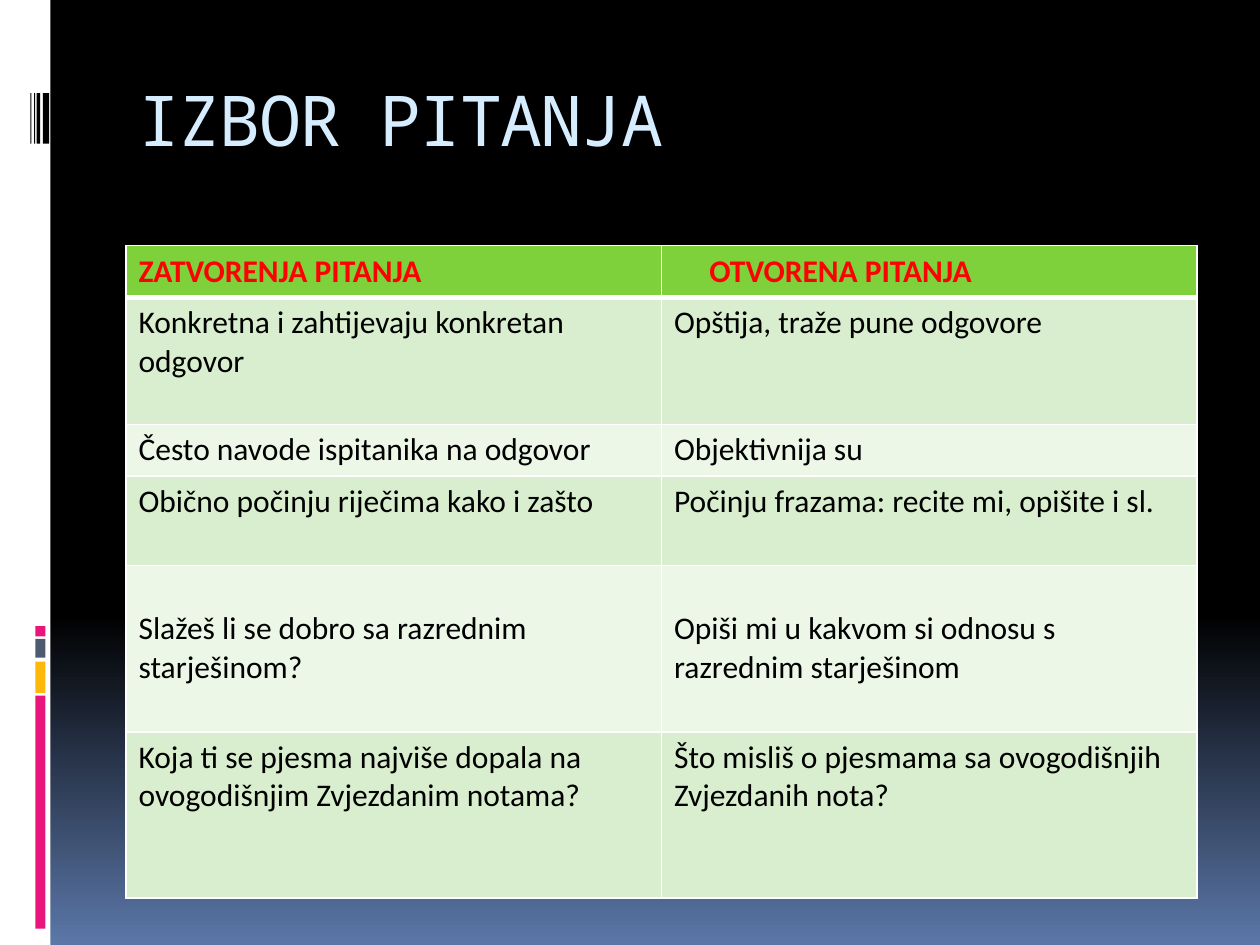
from typing import NamedTuple

from lxml.etree import SubElement
from pptx import Presentation
from pptx.dml.color import RGBColor
from pptx.enum.shapes import MSO_SHAPE as Shape
from pptx.enum.text import MSO_ANCHOR as Anchor
from pptx.oxml import parse_xml
from pptx.oxml.ns import nsdecls, qn
from pptx.util import Inches, Pt

WHITE = RGBColor(0xFF, 0xFF, 0xFF)
BLACK = RGBColor(0x00, 0x00, 0x00)
BLUE = RGBColor(0x5B, 0x77, 0xA8)
PALE_BLUE = RGBColor(0xD6, 0xEC, 0xFF)
PINK = RGBColor(0xEA, 0x15, 0x7A)
AMBER = RGBColor(0xFE, 0xB8, 0x0A)
SLATE = RGBColor(0x4E, 0x5B, 0x6F)
RED = RGBColor(0xFF, 0x00, 0x00)
GREEN = RGBColor(0x7F, 0xD1, 0x3B)
BANDS = (RGBColor(0xD8, 0xEE, 0xCE), RGBColor(0xEC, 0xF7, 0xE8))


class Bar(NamedTuple):
    left: float
    top: float
    width: float
    height: float
    color: RGBColor


class Row(NamedTuple):
    closed: str
    open: str
    height: float
    top_margin: float = 0.05


BARS = [
    Bar(0, 0, 0.4, 7.5, WHITE),
    Bar(0.28, 5.52, 0.08, 1.85, PINK),
    Bar(0.28, 5.25, 0.08, 0.25, AMBER),
    Bar(0.28, 5.07, 0.08, 0.15, SLATE),
    Bar(0.28, 4.97, 0.08, 0.08, PINK),
] + [
    Bar(left, 0.74, width, 0.4, BLACK)
    for left, width in ((0.34, 0.05), (0.29, 0.03), (0.27, 0.01), (0.24, 0.01))
]

ROWS = [
    Row("ZATVORENJA PITANJA", "OTVORENA PITANJA", 0.41),
    Row("Konkretna i zahtijevaju konkretan odgovor",
        "Opštija, traže pune odgovore", 1.01),
    Row("Često navode ispitanika na odgovor", "Objektivnija su", 0.41),
    Row("Obično počinju riječima kako i zašto",
        "Počinju frazama: recite mi, opišite i sl.", 0.71),
    Row("Slažeš li se dobro sa razrednim starješinom?",
        "Opiši mi u kakvom si odnosu s razrednim starješinom", 1.32, 0.35),
    Row("Koja ti se pjesma najviše dopala na ovogodišnjim Zvjezdanim notama?",
        "Što misliš o pjesmama sa ovogodišnjih Zvjezdanih nota?", 1.32),
]


def paint_background(s) -> None:
    fill = s.background.fill
    fill.gradient()
    fill.gradient_angle = 270
    for stop, position, color in zip(fill.gradient_stops, (0.65, 1), (BLACK, BLUE)):
        stop.position = position
        stop.color.rgb = color


def add_bar(s, bar: Bar) -> None:
    sp = s.shapes.add_shape(Shape.RECTANGLE, *map(Inches, bar[:4]))
    sp.shadow.inherit = False
    sp.fill.solid()
    sp.fill.fore_color.rgb = bar.color
    sp.line.fill.background()


def add_run(p, text: str, font: str, size: float, color: RGBColor, bold: bool = False):
    r = p.add_run()
    r.text = text
    r.font.name = font
    r.font.size = Pt(size)
    r.font.bold = bold
    r.font.color.rgb = color
    return r


def add_title(s) -> None:
    tf = s.shapes.add_textbox(Inches(1), Inches(0.56), Inches(8.5), Inches(1)).text_frame
    tf.word_wrap = True
    tf.vertical_anchor = Anchor.TOP
    tf.margin_top = Inches(0.05)
    r = add_run(tf.paragraphs[0], "IZBOR PITANJA", "Noto Sans Mono", 40, PALE_BLUE)
    r.font._element.set("spc", "-100")


def set_borders(cell, top: float, bottom: float) -> None:
    """Draw white cell borders; widths are in points."""
    tc_pr = cell._tc.get_or_add_tcPr()
    widths = {"lnL": 1, "lnR": 1, "lnT": top, "lnB": bottom}
    for index, (tag, width) in enumerate(widths.items()):
        ln = parse_xml(f'<a:{tag} {nsdecls("a")} w="{Pt(width)}"/>')
        fill = SubElement(ln, qn("a:solidFill"))
        SubElement(fill, qn("a:srgbClr"), val=str(WHITE))
        tc_pr.insert(index, ln)


def add_question_table(s) -> None:
    height = sum(row.height for row in ROWS)
    table = s.shapes.add_table(len(ROWS), 2, Inches(1), Inches(1.95),
                               Inches(8.5), Inches(height)).table
    for i, row in enumerate(ROWS):
        table.rows[i].height = Inches(row.height)
        header = i == 0
        for j, text in enumerate((row.closed, row.open)):
            cell = table.cell(i, j)
            cell.margin_top = Inches(row.top_margin)
            if header and j == 1:
                cell.margin_left = Inches(0.38)
            cell.fill.solid()
            cell.fill.fore_color.rgb = GREEN if header else BANDS[(i - 1) % 2]
            set_borders(cell, top=3 if i == 1 else 1, bottom=3 if header else 1)
            add_run(cell.text_frame.paragraphs[0], text, "Calibri", 18,
                    RED if header else BLACK, header)


def main() -> None:
    prs = Presentation()
    prs.slide_width, prs.slide_height = Inches(10), Inches(7.5)
    s = prs.slides.add_slide(prs.slide_layouts[6])
    paint_background(s)
    for bar in BARS:
        add_bar(s, bar)
    add_title(s)
    add_question_table(s)
    prs.save("out.pptx")


if __name__ == "__main__":
    main()
